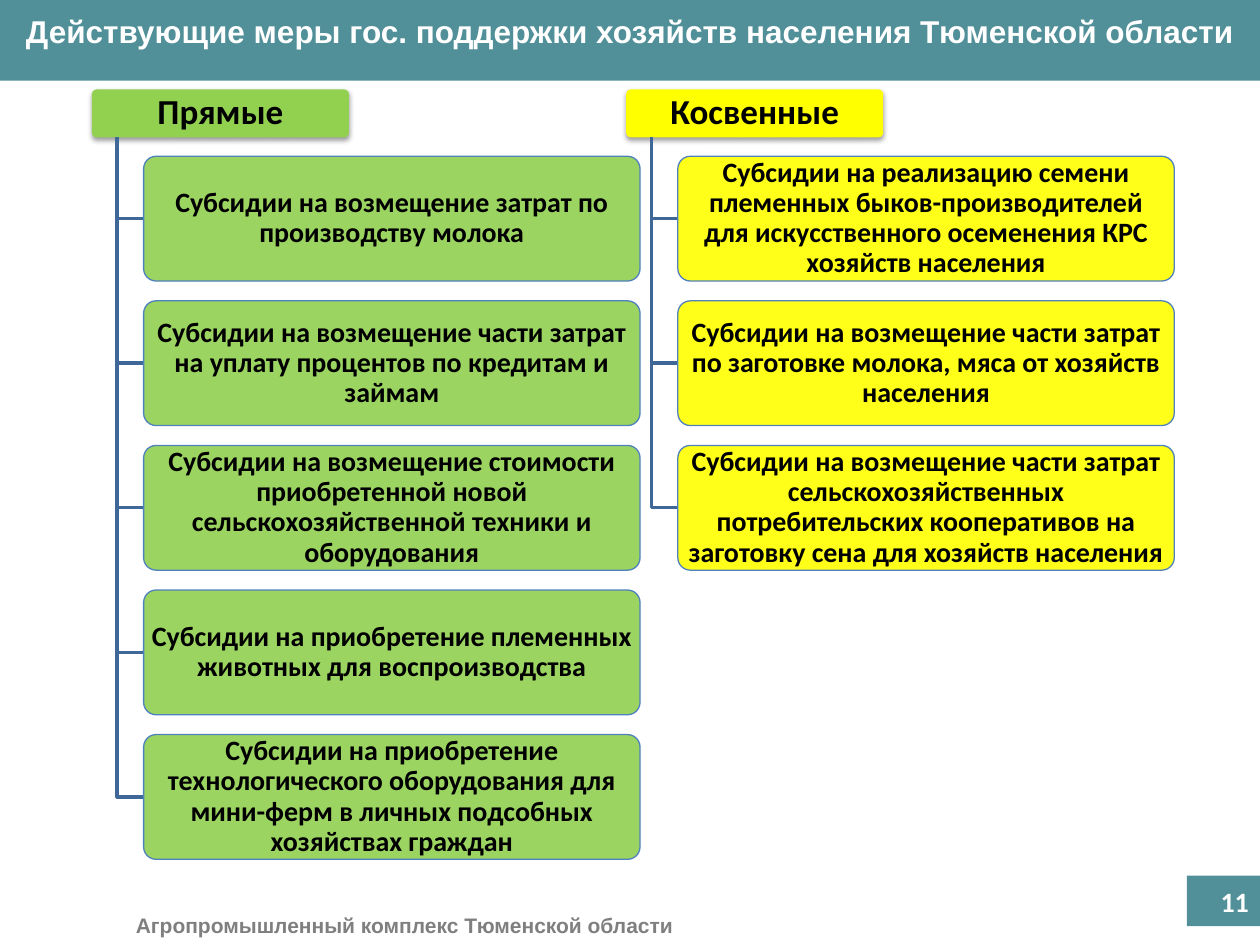
from lxml import etree
from pptx import Presentation
from pptx.dml.color import RGBColor
from pptx.enum.shapes import MSO_SHAPE as Preset
from pptx.enum.text import MSO_ANCHOR as Anchor, PP_ALIGN as Align
from pptx.oxml import parse_xml
from pptx.oxml.ns import nsdecls, qn
from pptx.util import Inches, Pt

COLORS = {
    "teal": "519099", "green": "92D050", "yellow": "FFFF00", "branch": "3F6797",
    "border": "4F81BD", "footer": "7F7F7F", "white": "FFFFFF", "black": "000000",
}


def write(shape, text, size, color="black", font="Calibri", align=Align.CENTER,
          anchor=Anchor.MIDDLE, wrap=True, spacing=1.0, inset=(0.1, 0.05)):
    frame = shape.text_frame
    frame.word_wrap = wrap
    frame.vertical_anchor = anchor
    frame.margin_left = frame.margin_right = Inches(inset[0])
    frame.margin_top = frame.margin_bottom = Inches(inset[1])
    paragraph = frame.paragraphs[0]
    paragraph.alignment = align
    paragraph.line_spacing = spacing
    run = paragraph.add_run()
    run.text = text
    run.font.size = Pt(size)
    run.font.name = font
    run.font.bold = True
    run.font.color.rgb = RGBColor.from_string(COLORS[color])


def add_block(preset, left, top, width, height, fill, border=None):
    block = slide.shapes.add_shape(
        preset, Inches(left), Inches(top), Inches(width), Inches(height))
    block.shadow.inherit = False
    block.fill.solid()
    block.fill.fore_color.rgb = RGBColor.from_string(COLORS[fill])
    if border:
        block.line.color.rgb = RGBColor.from_string(COLORS[border])
        block.line.width = Pt(0.75)
    else:
        block.line.fill.background()
    if preset == Preset.ROUNDED_RECTANGLE:
        block.adjustments[0] = 0.1
    return block


SLIDE_W, SLIDE_H = 10, 7.5
prs = Presentation()
prs.slide_width, prs.slide_height = Inches(SLIDE_W), Inches(SLIDE_H)
slide = prs.slides.add_slide(prs.slide_layouts[6])

# Title band, page number and footer
add_block(Preset.RECTANGLE, 0, 0, SLIDE_W, 0.64, "teal")
add_block(Preset.RECTANGLE, 9.42, 6.95, 0.58, 0.4, "teal")
footer = slide.shapes.add_textbox(Inches(0.98), Inches(7.19), Inches(4.51), Inches(0.3))
write(footer, "Агропромышленный комплекс Тюменской области", 12, color="footer",
      font="Arial", align=Align.LEFT, anchor=Anchor.TOP, wrap=False)
page_number = slide.shapes.add_textbox(
    Inches(7.68), Inches(6.95), Inches(2.33), Inches(0.4))
write(page_number, "11", 16, color="white", align=Align.RIGHT)
title = slide.shapes.add_textbox(0, Inches(0.05), Inches(SLIDE_W), Inches(0.4))
write(title, "Действующие меры гос. поддержки хозяйств населения Тюменской области",
      18, color="white", font="Arial", anchor=Anchor.TOP)

# Two trees of support measures
HEAD_TOP, HEAD_W, HEAD_H = 0.71, 2.04, 0.38
HEAD_BOTTOM = HEAD_TOP + HEAD_H
ROW_TOP, LAST_ROW_TOP, LAST_ROW = 1.24, 5.83, 4
ROW_STEP = (LAST_ROW_TOP - ROW_TOP) / LAST_ROW
MEASURE_W, MEASURE_H = 3.94, 0.99
TRUNK_DX, MEASURE_DX = 0.2, 0.41

trees = [
    ("Прямые", 0.73, "green", [
        "Субсидии на возмещение затрат по производству молока",
        "Субсидии на возмещение части затрат на уплату процентов по кредитам и займам",
        "Субсидии на возмещение стоимости приобретенной новой "
        "сельскохозяйственной техники и оборудования",
        "Субсидии на приобретение племенных животных для воспроизводства",
        "Субсидии на приобретение технологического оборудования для мини-ферм "
        "в личных подсобных хозяйствах граждан",
    ]),
    ("Косвенные", 4.97, "yellow", [
        "Субсидии на реализацию семени племенных быков-производителей "
        "для искусственного осеменения КРС хозяйств населения",
        "Субсидии на возмещение части затрат по заготовке молока, мяса "
        "от хозяйств населения",
        "Субсидии на возмещение части затрат сельскохозяйственных "
        "потребительских кооперативов на заготовку сена для хозяйств населения",
    ]),
]

for heading, left, fill, measures in trees:
    head = add_block(Preset.ROUNDED_RECTANGLE, left, HEAD_TOP, HEAD_W, HEAD_H, fill)
    head.element.spPr.find(qn("a:effectLst")).append(parse_xml(
        f'<a:outerShdw {nsdecls("a")} blurRad="{Pt(3.1)}" dist="{Pt(1.6)}" '
        f'dir="5400000" rotWithShape="0"><a:srgbClr val="{COLORS["black"]}">'
        '<a:alpha val="38000"/></a:srgbClr></a:outerShdw>'))
    write(head, heading, 20, spacing=0.9, inset=(0.04, 0.03))

    trunk_x, measure_x = left + TRUNK_DX, left + MEASURE_DX
    for row, measure in enumerate(measures):
        top = ROW_TOP + row * ROW_STEP
        middle = top + MEASURE_H / 2
        outline = slide.shapes.build_freeform(
            Inches(trunk_x), Inches(HEAD_BOTTOM))
        outline.add_line_segments(
            [(Inches(trunk_x), Inches(middle)), (Inches(measure_x), Inches(middle))],
            close=False)
        branch = outline.convert_to_shape()
        branch.shadow.inherit = False
        branch.fill.background()
        branch.line.color.rgb = RGBColor.from_string(COLORS["branch"])
        branch.line.width = Pt(2)

        box = add_block(Preset.ROUNDED_RECTANGLE, measure_x, top,
                        MEASURE_W, MEASURE_H, fill, border="border")
        fill_color = box.element.spPr.find(qn("a:solidFill"))[0]
        etree.SubElement(fill_color, qn("a:alpha"), val="90000")
        write(box, measure, 16, spacing=0.9, inset=(0.03, 0.02))

prs.save("out.pptx")
